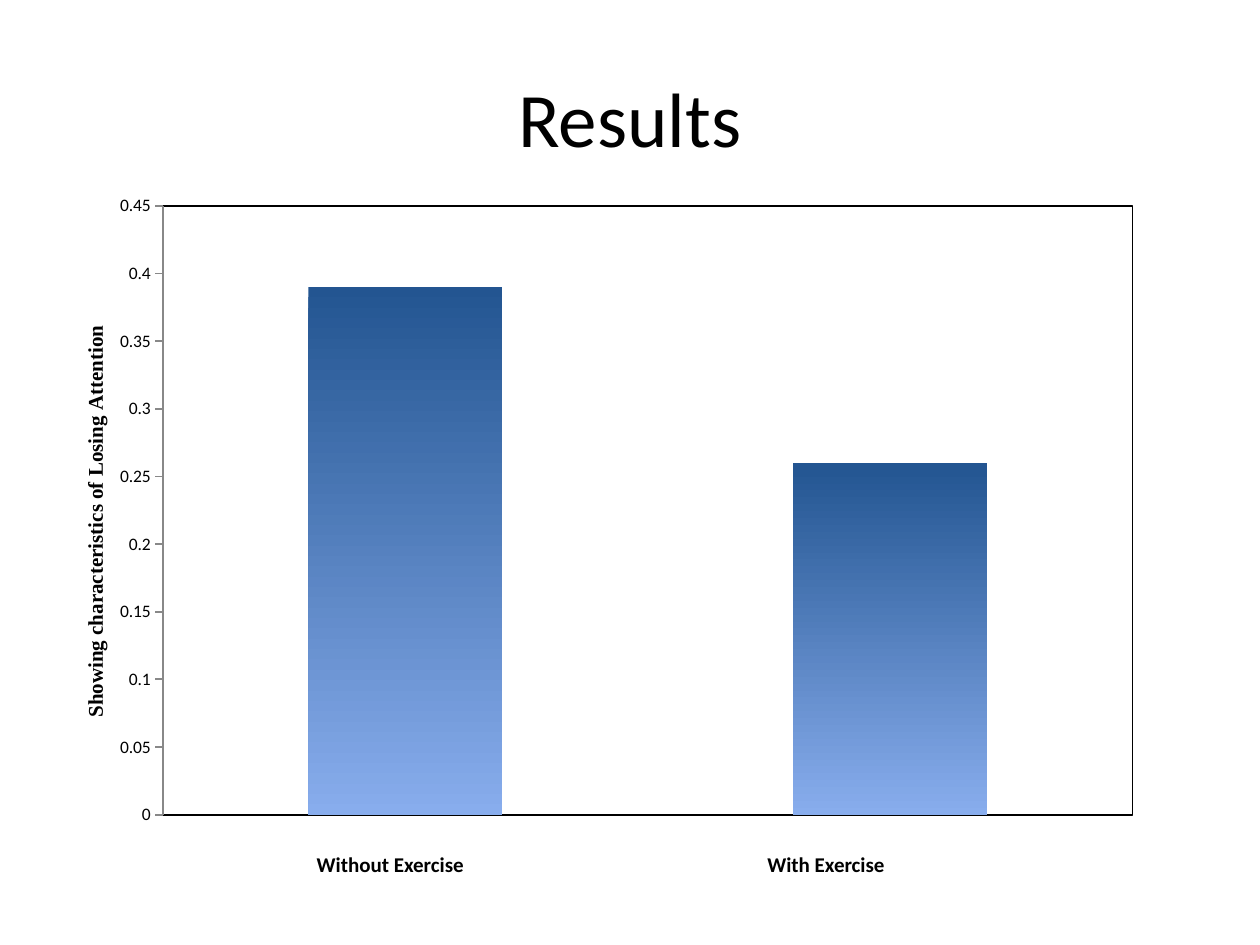
import pptx
import pptx.chart.data
import pptx.dml.color
import pptx.enum.chart
import pptx.enum.text
import pptx.util
from lxml import etree

Pt = pptx.util.Pt


def color(value):
    return pptx.dml.color.RGBColor.from_string(value)


def style_font(font, size, bold=False, name="Calibri"):
    font.name = name
    font.size = Pt(size)
    font.bold = bold
    font.color.rgb = color("000000")


def add_centred_text(page, text, left, top, width, height, size, bold=False):
    box = page.shapes.add_textbox(Pt(left), Pt(top), Pt(width), Pt(height))
    frame = box.text_frame
    frame.word_wrap = True
    frame.vertical_anchor = pptx.enum.text.MSO_ANCHOR.MIDDLE
    frame.text = text
    para = frame.paragraphs[0]
    para.alignment = pptx.enum.text.PP_ALIGN.CENTER
    style_font(para.runs[0].font, size, bold)


def add_child(parent, tag, **attributes):
    namespace = etree.QName(parent).namespace
    return etree.SubElement(parent, f"{{{namespace}}}{tag}", attributes)


def set_layout(element, **settings):
    """Place a chart part by fractions of the chart area."""
    for old in element.findall("{*}layout"):
        element.remove(old)
    layout = add_child(element, "layout")
    manual = add_child(layout, "manualLayout")
    for tag, value in settings.items():
        add_child(manual, tag, val=str(value))
    return layout


def style_plot_area(chart):
    area = chart.element.find(".//{*}plotArea")
    layout = set_layout(area, layoutTarget="inner", xMode="edge", yMode="edge",
                        x=0.085, y=0.015, w=0.858, h=0.866)
    area.insert(0, layout)
    properties = add_child(area, "spPr")
    drawing = "http://schemas.openxmlformats.org/drawingml/2006/main"
    etree.SubElement(properties, f"{{{drawing}}}noFill")
    line = etree.SubElement(properties, f"{{{drawing}}}ln", w=str(int(Pt(1))))
    fill = add_child(line, "solidFill")
    add_child(fill, "srgbClr", val="000000")


def style_value_axis(axis):
    axis.minimum_scale = 0
    axis.maximum_scale = 0.45
    axis.major_unit = 0.05
    axis.has_major_gridlines = False
    axis.major_tick_mark = pptx.enum.chart.XL_TICK_MARK.OUTSIDE
    axis.tick_labels.number_format = "General"
    axis.tick_labels.number_format_is_linked = False
    style_font(axis.tick_labels.font, 10)
    axis.format.line.color.rgb = color("888888")
    axis.format.line.width = Pt(1)

    title = axis.axis_title
    title.text_frame.text = "Showing characteristics of Losing Attention"
    style_font(title.text_frame.paragraphs[0].runs[0].font, 12, True, "Times New Roman")
    title_element = axis.axis_title.text_frame._txBody.getparent().getparent()
    layout = set_layout(title_element, xMode="edge", yMode="edge", x=0.01, y=0.18)
    title_element.insert(1, layout)


def add_attention_chart(page, left, top, width, height):
    data = pptx.chart.data.CategoryChartData()
    data.categories = ["1", "2"]
    data.add_series("Series 1", [0.39, 0.26])
    chart = page.shapes.add_chart(
        pptx.enum.chart.XL_CHART_TYPE.COLUMN_STACKED,
        Pt(left), Pt(top), Pt(width), Pt(height), data).chart
    chart.has_legend = False
    chart.has_title = False
    style_font(chart.font, 10)
    chart.category_axis.visible = False
    style_value_axis(chart.value_axis)

    plot = chart.plots[0]
    plot.gap_width = 150
    plot.overlap = 100
    plot.vary_by_categories = False
    fill = plot.series[0].format.fill
    fill.gradient()
    fill.gradient_angle = 270
    for stop, shade in zip(fill.gradient_stops, ["235591", "88ADED"]):
        stop.color.rgb = color(shade)
    style_plot_area(chart)


def build_results(page):
    add_centred_text(page, "Results", 36, 21.6, 648, 90, 44)
    add_attention_chart(page, 38.2, 111.6, 645.8, 401.8)
    for text, center in [("Without Exercise", 223), ("With Exercise", 472)]:
        add_centred_text(page, text, center - 70, 482, 140, 23, 12, True)


deck = pptx.Presentation()
deck.slide_width = Pt(720)
deck.slide_height = Pt(540)
build_results(deck.slides.add_slide(deck.slide_layouts[6]))
deck.save("out.pptx")
